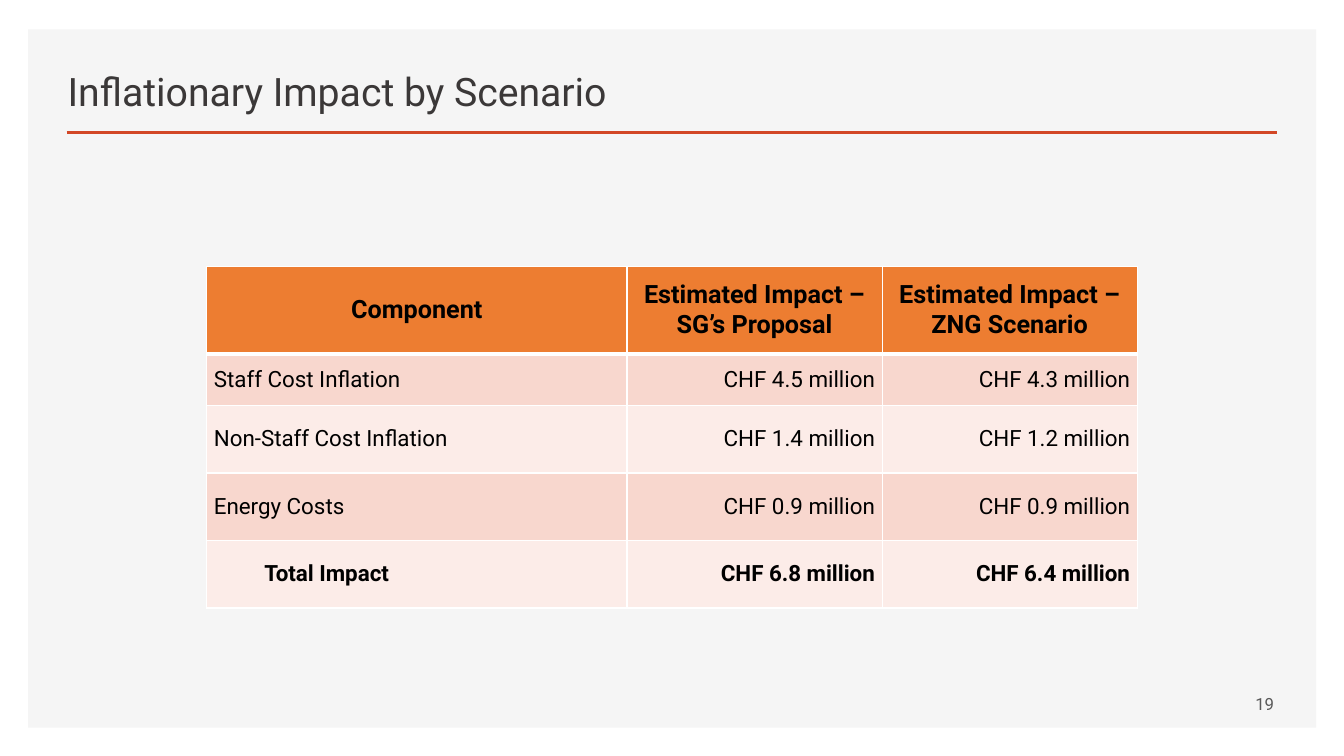
import dataclasses

import pptx
import pptx.dml.color
import pptx.enum.shapes
import pptx.enum.text
import pptx.oxml
import pptx.oxml.ns
import pptx.util

Cm = pptx.util.Cm
Pt = pptx.util.Pt
ALIGN = pptx.enum.text.PP_ALIGN
MIDDLE = pptx.enum.text.MSO_ANCHOR.MIDDLE
BOTTOM = pptx.enum.text.MSO_ANCHOR.BOTTOM


@dataclasses.dataclass(frozen=True)
class Theme:
    font: str = "Roboto"
    panel: str = "F5F5F5"
    rule: str = "D24726"
    title: str = "3B3838"
    text: str = "000000"
    page: str = "595959"
    header: str = "ED7D31"
    bands: tuple = ("F8D7CE", "FCECE8")
    border: str = "FFFFFF"
    title_size: int = 28
    header_size: int = 18
    body_size: int = 16
    page_size: int = 12


THEME = Theme()
HEADERS = ("Component", "Estimated Impact – SG’s Proposal", "Estimated Impact – ZNG Scenario")
COSTS = (
    ("Staff Cost Inflation", "CHF 4.5 million", "CHF 4.3 million"),
    ("Non-Staff Cost Inflation", "CHF 1.4 million", "CHF 1.2 million"),
    ("Energy Costs", "CHF 0.9 million", "CHF 0.9 million"),
    ("Total Impact", "CHF 6.8 million", "CHF 6.4 million"),
)
COLUMN_WIDTHS = (10.59, 6.43, 6.43)
ROW_HEIGHTS = (2.21, 1.3, 1.7, 1.7, 1.7)


def rgb(color):
    return pptx.dml.color.RGBColor.from_string(color)


def write(tf, text, size, color, align, bold=False):
    """Fill the first paragraph of a text frame and return it."""
    p = tf.paragraphs[0]
    p.text = text
    p.alignment = align
    p.font.name = THEME.font
    p.font.size = Pt(size)
    p.font.bold = bold
    p.font.color.rgb = rgb(color)
    return p


def add_title(s, text):
    sp = s.shapes.title
    sp.left, sp.top, sp.width, sp.height = Cm(1.45), Cm(1.24), Cm(23.8), Cm(1.78)
    tf = sp.text_frame
    tf.auto_size = pptx.enum.text.MSO_AUTO_SIZE.NONE
    tf.vertical_anchor = BOTTOM
    write(tf, text, THEME.title_size, THEME.title, ALIGN.LEFT)


def add_panel(s):
    """Add the grey background behind the title."""
    sp = s.shapes.add_shape(pptx.enum.shapes.MSO_SHAPE.RECTANGLE,
                            Cm(0.71), Cm(0.74), Cm(32.46), Cm(17.6))
    sp.shadow.inherit = False
    sp.fill.solid()
    sp.fill.fore_color.rgb = rgb(THEME.panel)
    sp.line.fill.background()
    s.shapes.title.element.addprevious(sp.element)


def add_rule(s):
    line = s.shapes.add_connector(pptx.enum.shapes.MSO_CONNECTOR.STRAIGHT,
                                  Cm(1.68), Cm(3.33), Cm(32.18), Cm(3.33))
    line.line.color.rgb = rgb(THEME.rule)
    line.line.width = Pt(2)
    line.element.spPr.append(pptx.oxml.parse_xml(
        f'<a:effectLst {pptx.oxml.ns.nsdecls("a")}/>'))


def set_borders(cell, top, bottom):
    """Draw all four cell borders; top and bottom are widths in points."""
    tc_pr = cell._tc.get_or_add_tcPr()
    widths = {"lnL": 1, "lnR": 1, "lnT": top, "lnB": bottom}
    for i, (tag, width) in enumerate(widths.items()):
        tc_pr.insert(i, pptx.oxml.parse_xml(
            f'<a:{tag} {pptx.oxml.ns.nsdecls("a")} w="{Pt(width)}"><a:solidFill>'
            f'<a:srgbClr val="{THEME.border}"/></a:solidFill></a:{tag}>'))


def fill_cell(cell, color):
    cell.vertical_anchor = MIDDLE
    cell.fill.solid()
    cell.fill.fore_color.rgb = rgb(color)


def format_header(cell, text):
    fill_cell(cell, THEME.header)
    set_borders(cell, 1, 3)
    write(cell.text_frame, text, THEME.header_size, THEME.text, ALIGN.CENTER, True)


def format_cost(cell, text, row, column):
    is_total = row == len(COSTS)
    fill_cell(cell, THEME.bands[(row - 1) % 2])
    set_borders(cell, 3 if row == 1 else 1, 1)
    cell.margin_left = cell.margin_right = Cm(0.18)
    cell.margin_top = cell.margin_bottom = 0
    align = ALIGN.RIGHT if column else ALIGN.LEFT
    p = write(cell.text_frame, text, THEME.body_size, THEME.text, align, is_total)
    p.space_before = p.space_after = Pt(3)
    if is_total:
        p.level = 1
        p_pr = p._p.get_or_add_pPr()
        p_pr.set("marL", str(Cm(1.27)))
        p_pr.set("indent", "0")


def add_cost_table(s):
    frame = s.shapes.add_table(len(ROW_HEIGHTS), len(COLUMN_WIDTHS), Cm(5.21), Cm(6.71),
                               Cm(sum(COLUMN_WIDTHS)), Cm(sum(ROW_HEIGHTS)))
    table = frame.table
    for column, width in zip(table.columns, COLUMN_WIDTHS):
        column.width = Cm(width)
    for row, height in zip(table.rows, ROW_HEIGHTS):
        row.height = Cm(height)
    for j, text in enumerate(HEADERS):
        format_header(table.cell(0, j), text)
    for i, costs in enumerate(COSTS, start=1):
        for j, text in enumerate(costs):
            format_cost(table.cell(i, j), text, i, j)


def add_page_number(s, number):
    tf = s.shapes.add_textbox(Cm(23.27), Cm(17.22), Cm(9.09), Cm(1.02)).text_frame
    tf.word_wrap = True
    tf.vertical_anchor = MIDDLE
    write(tf, number, THEME.page_size, THEME.page, ALIGN.RIGHT)


def main():
    prs = pptx.Presentation()
    prs.slide_width, prs.slide_height = Cm(33.87), Cm(19.05)
    s = prs.slides.add_slide(prs.slide_layouts.get_by_name("Title Only"))
    add_panel(s)
    add_title(s, "Inflationary Impact by Scenario")
    add_rule(s)
    add_cost_table(s)
    add_page_number(s, "19")
    prs.save("out.pptx")


if __name__ == "__main__":
    main()
